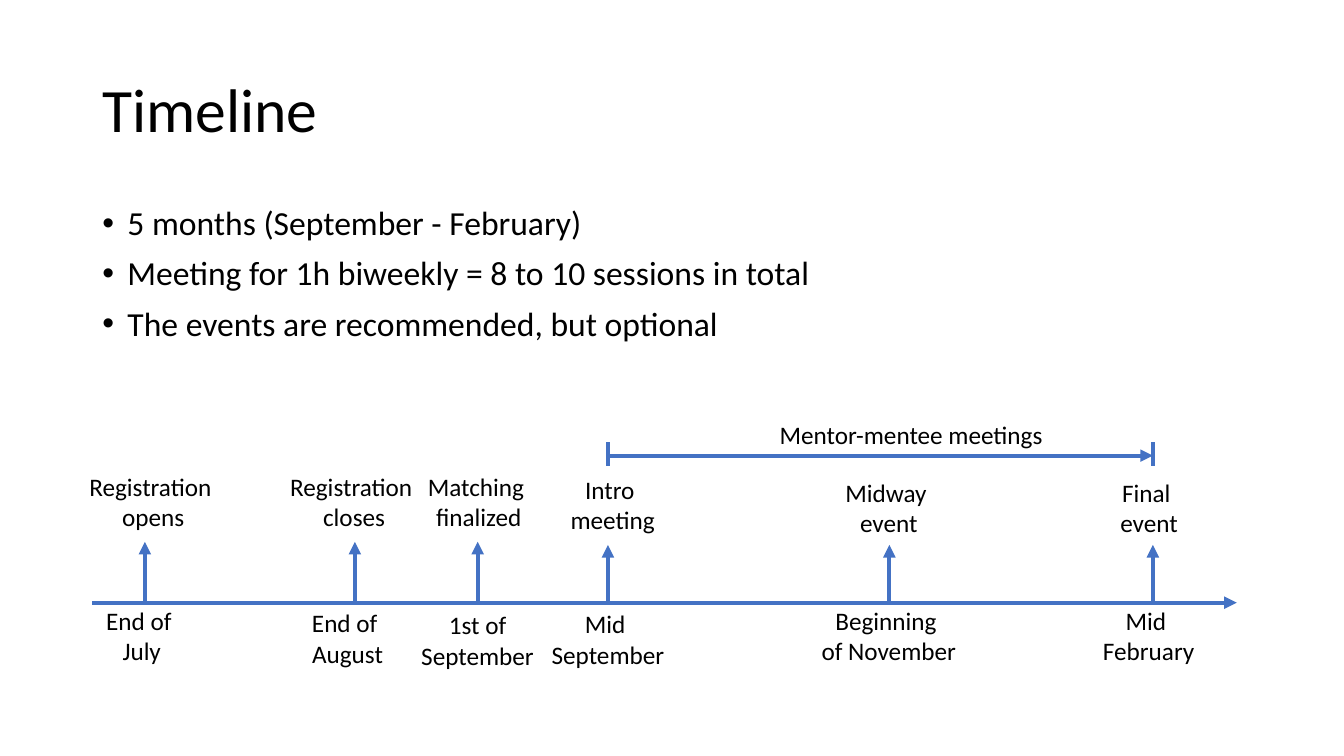
from lxml.etree import SubElement
from pptx import Presentation
from pptx.dml.color import RGBColor
from pptx.enum.shapes import MSO_CONNECTOR
from pptx.enum.text import MSO_ANCHOR, MSO_AUTO_SIZE, PP_ALIGN
from pptx.oxml.ns import qn
from pptx.util import Emu, Pt

EMU_PER_PX = 9525
BLACK = "000000"
BLUE = "4472C4"

AXIS_Y = 574
LABEL_HEIGHT = 68

# (arrow x, arrow tip y, event label, date label)
# each label: (lines, centre x, top, width)
EVENTS = [
    (138, 516, ("Registration \nopens", 146, 444, 142), ("End of \nJuly", 135, 572, 88)),
    (338, 516, ("Registration\n closes", 334, 444, 137), ("End of \nAugust", 331, 574, 88)),
    (455, 516, ("Matching \nfinalized", 456, 444, 118), ("1st of \nSeptember ", 457, 576, 133)),
    (579, 519, ("Intro \nmeeting", 583, 447, 101), ("Mid \nSeptember", 579, 575, 128)),
    (847, 519, ("Midway \nevent", 846, 450, 103), ("Beginning \nof November", 846, 572, 149)),
    (1098, 519, ("Final \nevent", 1094, 450, 75), ("Mid \nFebruary", 1094, 572, 108)),
]


def px(length):
    return Emu(length * EMU_PER_PX)


def color(hex_string):
    return RGBColor.from_string(hex_string)


class TimelineSlide:
    def __init__(self, presentation, font="Calibri", line_width=3):
        self.slide = presentation.slides.add_slide(presentation.slide_layouts[6])
        self.font = font
        self.line_width = line_width

    def text(self, text, left, top, width, height, *, size=18, align=PP_ALIGN.LEFT,
             anchor=MSO_ANCHOR.TOP, wrap=True, line_spacing=None, space_before=0,
             bullet=False):
        shape = self.slide.shapes.add_textbox(px(left), px(top), px(width), px(height))
        frame = shape.text_frame
        frame.word_wrap = wrap
        frame.auto_size = MSO_AUTO_SIZE.NONE if wrap else MSO_AUTO_SIZE.SHAPE_TO_FIT_TEXT
        frame.vertical_anchor = anchor
        for index, line in enumerate(text.split("\n")):
            paragraph = frame.add_paragraph() if index else frame.paragraphs[0]
            paragraph.alignment = align
            paragraph.line_spacing = line_spacing
            paragraph.space_before = Pt(space_before)
            run = paragraph.add_run()
            run.text = line
            run.font.name = self.font
            run.font.size = Pt(size)
            run.font.color.rgb = color(BLACK)
            if bullet:
                self.bullet(paragraph)

    def bullet(self, paragraph, indent=24):
        properties = paragraph._p.get_or_add_pPr()
        properties.set("marL", str(px(indent)))
        properties.set("indent", str(-px(indent)))
        SubElement(properties, qn("a:buFont"), typeface="Arial")
        SubElement(properties, qn("a:buChar"), char="•")

    def label(self, text, center, top, width):
        self.text(text, center - width // 2, top, width, LABEL_HEIGHT,
                  align=PP_ALIGN.CENTER, wrap=False)

    def line(self, x1, y1, x2, y2, *, arrow=False):
        connector = self.slide.shapes.add_connector(
            MSO_CONNECTOR.STRAIGHT, px(x1), px(y1), px(x2), px(y2))
        connector.line.color.rgb = color(BLUE)
        connector.line.width = Pt(self.line_width)
        if arrow:
            SubElement(connector.line._get_or_add_ln(), qn("a:tailEnd"), type="triangle")
        SubElement(connector._element.spPr, qn("a:effectLst"))


def main():
    presentation = Presentation()
    presentation.slide_width = px(1280)
    presentation.slide_height = px(720)
    timeline = TimelineSlide(presentation)

    # Title and key facts
    timeline.text("Timeline", 88, 38, 1104, 139, size=44,
                  anchor=MSO_ANCHOR.MIDDLE, line_spacing=0.9)
    timeline.text("5 months (September - February)\n"
                  "Meeting for 1h biweekly = 8 to 10 sessions in total\n"
                  "The events are recommended, but optional",
                  88, 192, 1104, 163, size=24, line_spacing=0.9,
                  space_before=10, bullet=True)

    # Time axis with events above and dates below
    timeline.line(88, AXIS_Y, 1178, AXIS_Y, arrow=True)
    for x, tip, event, date in EVENTS:
        timeline.line(x, AXIS_Y, x, tip, arrow=True)
        timeline.label(*event)
        timeline.label(*date)

    # Meeting period, from the intro meeting to the final event
    start, end = EVENTS[3][0], EVENTS[-1][0]
    timeline.line(start, 434, end, 434, arrow=True)
    for x in (start, end):
        timeline.line(x, 421, x, 444)
    timeline.text("Mentor-mentee meetings", 733, 395, 281, 38, wrap=False)

    presentation.save("out.pptx")


if __name__ == "__main__":
    main()
